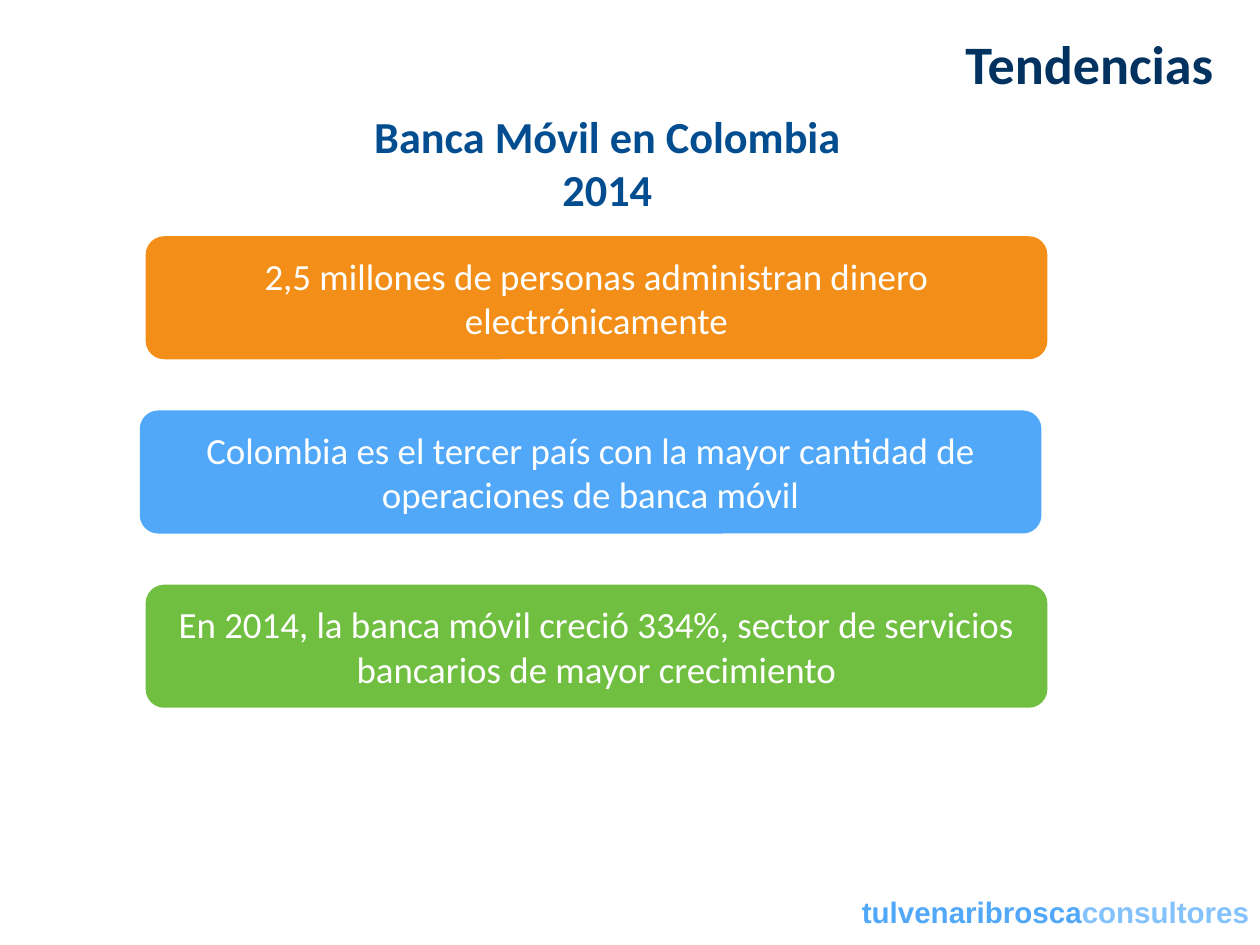
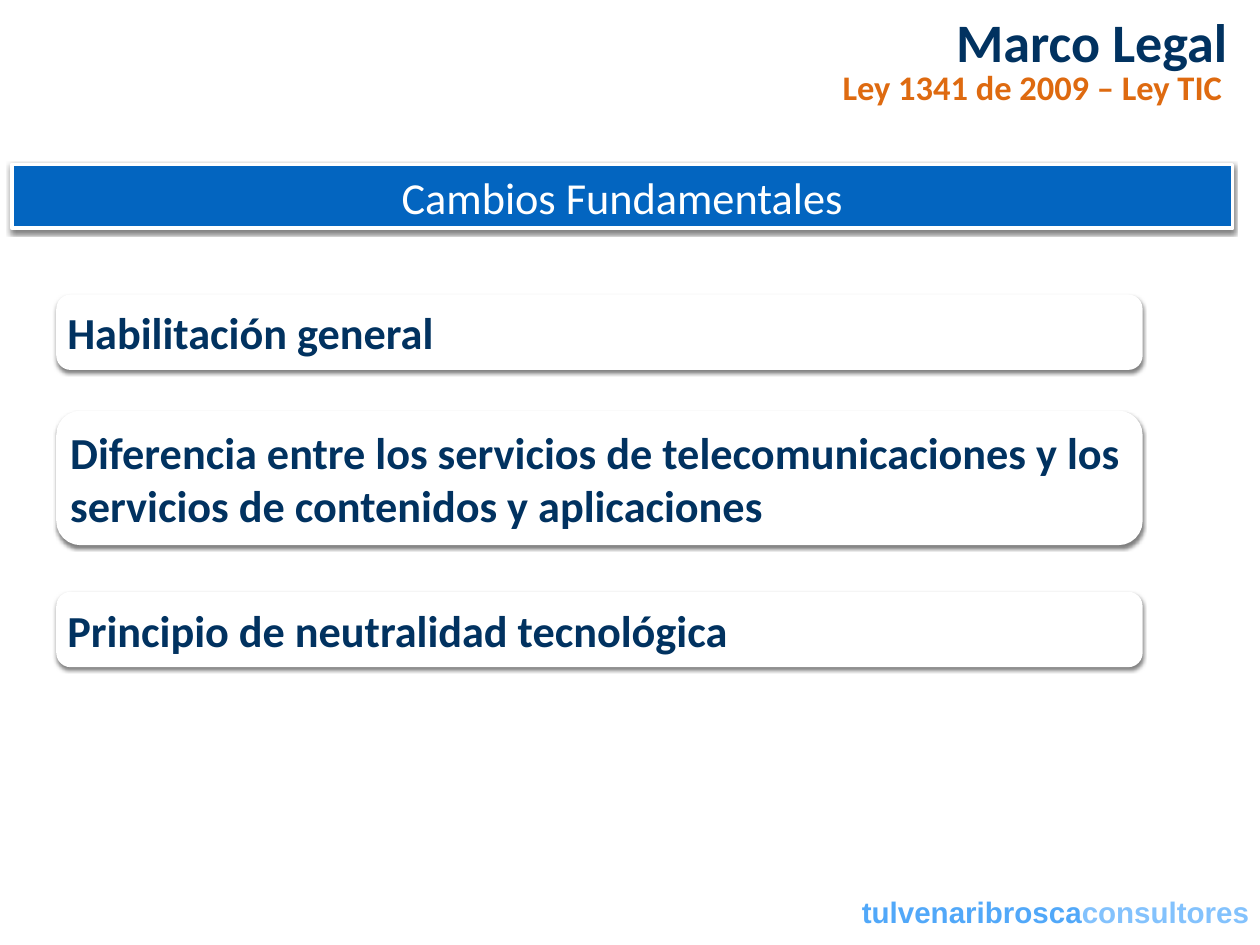
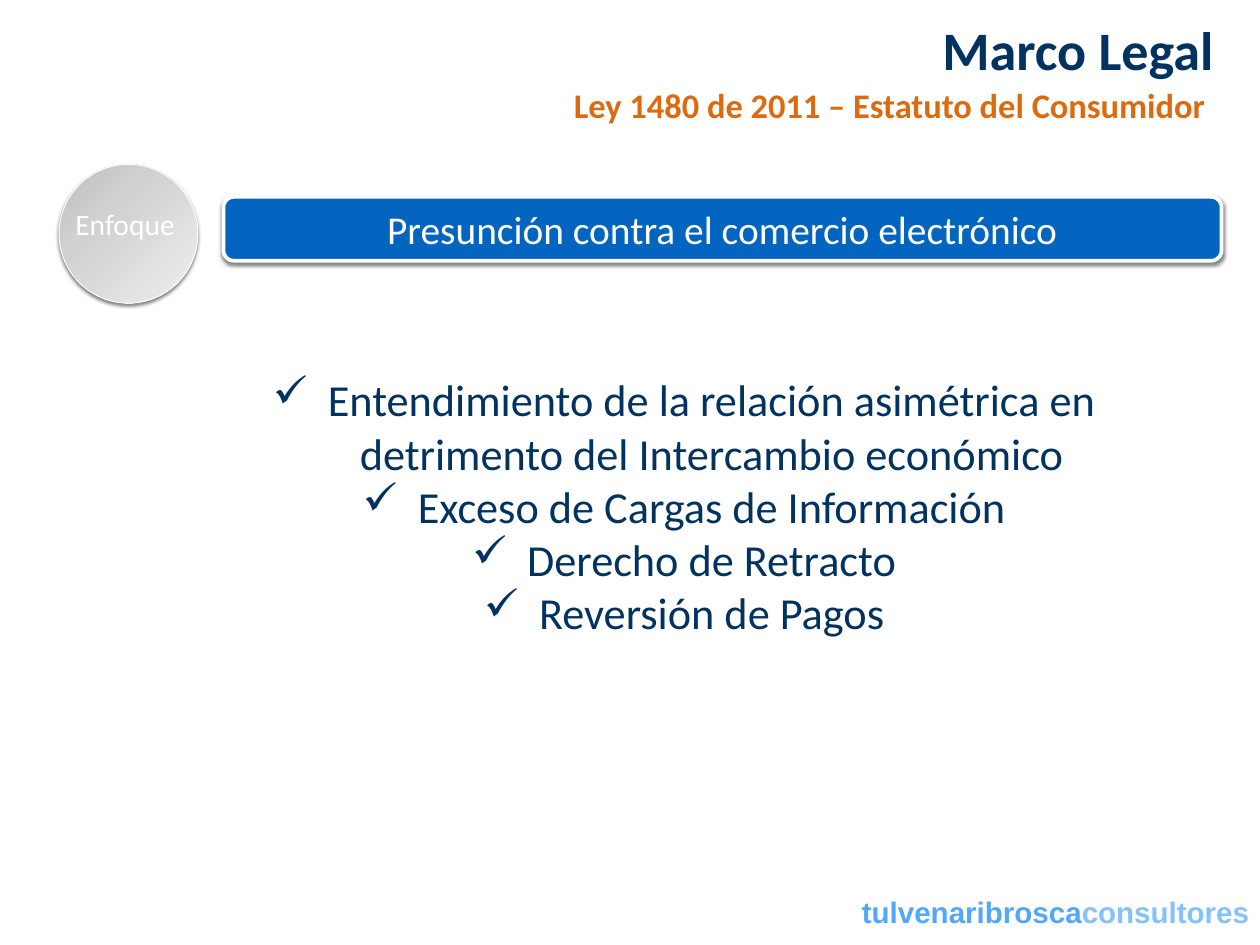
"""Build three slides on mobile banking trends and the legal framework."""
from dataclasses import dataclass
from typing import NamedTuple, Optional

from pptx import Presentation
from pptx.dml.color import RGBColor
from pptx.enum.shapes import MSO_SHAPE
from pptx.enum.text import MSO_ANCHOR, MSO_AUTO_SIZE, PP_ALIGN
from pptx.oxml import parse_xml
from pptx.oxml.ns import nsdecls, qn
from pptx.shapes.autoshape import Shape
from pptx.slide import Slide, SlideLayout
from pptx.text.text import TextFrame, _Paragraph as Paragraph
from pptx.util import Emu, Pt

EMU_PER_PX = 10160


@dataclass(frozen=True)
class Theme:
    """Colours, fonts and type sizes shared by the slides."""
    navy: RGBColor = RGBColor.from_string("013260")
    heading: RGBColor = RGBColor.from_string("024C90")
    band: RGBColor = RGBColor.from_string("0365C0")
    accent: RGBColor = RGBColor.from_string("DE6A10")
    orange: RGBColor = RGBColor.from_string("F38F18")
    sky: RGBColor = RGBColor.from_string("51A8F9")
    pale_sky: RGBColor = RGBColor.from_string("83C2FD")
    green: RGBColor = RGBColor.from_string("70BF41")
    white: RGBColor = RGBColor.from_string("FFFFFF")
    circle_stops: tuple = ((0, "BDBDBD"), (35, "D1D1D1"), (100, "EEEEEE"))
    font: str = "Calibri"
    footer_font: str = "Arial"
    title_size: int = 44
    large_size: int = 36
    band_size: int = 32
    body_size: int = 30
    subtitle_size: int = 28
    small_size: int = 24


THEME = Theme()


class Box(NamedTuple):
    """Position and size in px."""
    left: int
    top: int
    width: int
    height: int


@dataclass(frozen=True)
class Panel:
    """A filled shape with text."""
    text: str
    box: Box
    fill: RGBColor
    size: int
    kind: MSO_SHAPE = MSO_SHAPE.ROUNDED_RECTANGLE
    color: RGBColor = THEME.white
    bold: bool = False
    align: PP_ALIGN = PP_ALIGN.CENTER
    corner: Optional[float] = None
    line_width: float = 0


def px(length: int) -> Emu:
    """Turn px into EMU."""
    return Emu(length * EMU_PER_PX)


def place(box: Box) -> tuple[Emu, ...]:
    """Turn a box into EMU lengths."""
    return tuple(px(length) for length in box)


def add_run(paragraph: Paragraph, text: str, *, size: int, color: RGBColor,
            bold: bool = False, font: str = THEME.font) -> None:
    """Append one formatted run."""
    run = paragraph.add_run()
    run.text = text
    run.font.name = font
    run.font.size = Pt(size)
    run.font.bold = bold
    run.font.color.rgb = color


def add_bullet(paragraph: Paragraph, character: str, indent: int) -> None:
    """Give a paragraph a hanging bullet."""
    properties = paragraph._p.get_or_add_pPr()
    properties.set("marL", str(px(indent)))
    properties.set("indent", str(-px(indent)))
    properties.append(parse_xml(f'<a:buChar {nsdecls("a")} char="{character}"/>'))


def write_text(frame: TextFrame, text: str, *, size: int, color: RGBColor,
               bold: bool = False, font: str = THEME.font,
               align: PP_ALIGN = PP_ALIGN.CENTER, inset: int = 5,
               bullet: Optional[str] = None) -> None:
    """Fill a text frame, one paragraph for each line of text."""
    frame.word_wrap = True
    frame.auto_size = MSO_AUTO_SIZE.NONE
    frame.vertical_anchor = MSO_ANCHOR.MIDDLE
    frame.margin_left = frame.margin_right = px(inset)
    frame.margin_top = frame.margin_bottom = px(5)
    for index, line in enumerate(text.split("\n")):
        paragraph = frame.add_paragraph() if index else frame.paragraphs[0]
        paragraph.alignment = align
        if bullet:
            add_bullet(paragraph, bullet, 56)
        add_run(paragraph, line, size=size, color=color, bold=bold, font=font)


def add_text(slide: Slide, text: str, box: Box, **text_format) -> Shape:
    """Add a formatted text box."""
    shape = slide.shapes.add_textbox(*place(box))
    write_text(shape.text_frame, text, **text_format)
    return shape


def add_shadow(shape: Shape) -> None:
    """Add a soft shadow below a shape."""
    shape.element.spPr.append(parse_xml(
        f'<a:effectLst {nsdecls("a")}><a:outerShdw blurRad="{Pt(3)}" dist="{Pt(2)}" '
        'dir="5400000" rotWithShape="0"><a:srgbClr val="000000">'
        '<a:alpha val="50000"/></a:srgbClr></a:outerShdw></a:effectLst>'))


def outline(shape: Shape, width: float) -> None:
    """Give a shape a white, shadowed outline, or neither when width is zero."""
    if width:
        shape.line.color.rgb = THEME.white
        shape.line.width = Pt(width)
        add_shadow(shape)
    else:
        shape.line.fill.background()
        shape.shadow.inherit = False


def add_panel(slide: Slide, panel: Panel) -> None:
    """Draw a panel."""
    shape = slide.shapes.add_shape(panel.kind, *place(panel.box))
    if panel.corner is not None:
        shape.adjustments[0] = panel.corner
    shape.fill.solid()
    shape.fill.fore_color.rgb = panel.fill
    outline(shape, panel.line_width)
    write_text(shape.text_frame, panel.text, size=panel.size, color=panel.color,
               bold=panel.bold, align=panel.align)


def add_gradient_circle(slide: Slide, box: Box) -> None:
    """Draw a circle shaded from grey to light grey."""
    shape = slide.shapes.add_shape(MSO_SHAPE.OVAL, *place(box))
    shape.fill.background()
    stops = "".join(f'<a:gs pos="{position * 1000}"><a:srgbClr val="{color}"/></a:gs>'
                    for position, color in THEME.circle_stops)
    properties = shape.element.spPr
    properties.replace(properties.find(qn("a:noFill")), parse_xml(
        f'<a:gradFill {nsdecls("a")}><a:gsLst>{stops}</a:gsLst>'
        '<a:lin ang="2700000" scaled="0"/></a:gradFill>'))
    outline(shape, 0.75)


def add_layout_footer(layout: SlideLayout, slide: Slide) -> None:
    """Build the footer and move it to the shared layout."""
    footer = add_text(slide, "tulvenaribrosca", Box(800, 904, 476, 44),
                      size=THEME.small_size, color=THEME.sky, bold=True,
                      font=THEME.footer_font, align=PP_ALIGN.RIGHT, inset=7)
    add_run(footer.text_frame.paragraphs[0], "consultores", size=THEME.small_size,
            color=THEME.pale_sky, bold=True, font=THEME.footer_font)
    layout.shapes.element.append(footer.element)


def set_title(slide: Slide, text: str, box: Box, inset: int = 5) -> None:
    """Place and format the title."""
    title = slide.shapes.title
    title.left, title.top, title.width, title.height = place(box)
    write_text(title.text_frame, text, size=THEME.title_size, color=THEME.navy,
               bold=True, align=PP_ALIGN.RIGHT, inset=inset)


def add_subtitle(slide: Slide, text: str, box: Box) -> None:
    """Add the name of the law below the title."""
    add_text(slide, text, box, size=THEME.subtitle_size, color=THEME.accent,
             bold=True, align=PP_ALIGN.LEFT)


def build_trends(slide: Slide) -> None:
    """Build the slide on mobile banking."""
    set_title(slide, "Tendencias", Box(862, 26, 380, 76), inset=9)
    add_text(slide, "Banca Móvil en Colombia\n2014", Box(84, 105, 1066, 119),
             size=THEME.large_size, color=THEME.heading, bold=True)
    facts = (
        ("2,5 millones de personas administran dinero electrónicamente",
         148, THEME.orange),
        ("Colombia es el tercer país con la mayor cantidad de operaciones de banca móvil",
         142, THEME.sky),
        ("En 2014, la banca móvil creció 334%, sector de servicios bancarios de mayor "
         "crecimiento", 148, THEME.green),
    )
    for index, (text, left, fill) in enumerate(facts):
        add_panel(slide, Panel(text, Box(left, 240 + 177 * index, 916, 125), fill,
                               THEME.body_size, corner=0.15))


def build_ict_law(slide: Slide) -> None:
    """Build the slide on the changes in the ICT law."""
    set_title(slide, "Marco Legal", Box(60, 3, 1192, 76))
    add_subtitle(slide, "Ley 1341 de 2009 – Ley TIC", Box(851, 62, 402, 52))
    add_panel(slide, Panel("Cambios Fundamentales", Box(12, 167, 1240, 65), THEME.band,
                           THEME.large_size, kind=MSO_SHAPE.RECTANGLE, line_width=3))
    changes = (
        ("Habilitación general", 302, 71),
        ("Diferencia entre los servicios de telecomunicaciones y los servicios de "
         "contenidos y aplicaciones", 420, 131),
        ("Principio de neutralidad tecnológica", 604, 71),
    )
    for text, top, height in changes:
        add_panel(slide, Panel(text, Box(60, top, 1098, height), THEME.white,
                               THEME.large_size, color=THEME.navy, bold=True,
                               align=PP_ALIGN.LEFT, line_width=4.5))


def build_consumer_law(slide: Slide) -> None:
    """Build the slide on the consumer statute."""
    set_title(slide, "Marco Legal", Box(46, 12, 1192, 76))
    add_subtitle(slide, "Ley 1480 de 2011 – Estatuto del Consumidor",
                 Box(578, 80, 661, 52))
    add_panel(slide, Panel("Presunción contra el comercio electrónico",
                           Box(227, 200, 1014, 65), THEME.band, THEME.band_size,
                           line_width=3))
    add_gradient_circle(slide, Box(60, 167, 141, 141))
    add_text(slide, "Enfoque", Box(30, 204, 194, 47), size=THEME.small_size,
             color=THEME.white)
    add_text(slide, "Entendimiento de la relación asimétrica en detrimento del "
                    "Intercambio económico\nExceso de Cargas de Información\n"
                    "Derecho de Retracto\nReversión de Pagos",
             Box(165, 372, 1060, 283), size=THEME.large_size, color=THEME.navy,
             bullet="✓")


def main() -> None:
    """Build and save the presentation."""
    presentation = Presentation()
    presentation.slide_width, presentation.slide_height = px(1280), px(960)
    layout = presentation.slide_layouts.get_by_name("Title Only")
    for index, build in enumerate((build_trends, build_ict_law, build_consumer_law)):
        slide = presentation.slides.add_slide(layout)
        if index == 0:
            add_layout_footer(layout, slide)
        build(slide)
    presentation.save("out.pptx")


if __name__ == "__main__":
    main()
